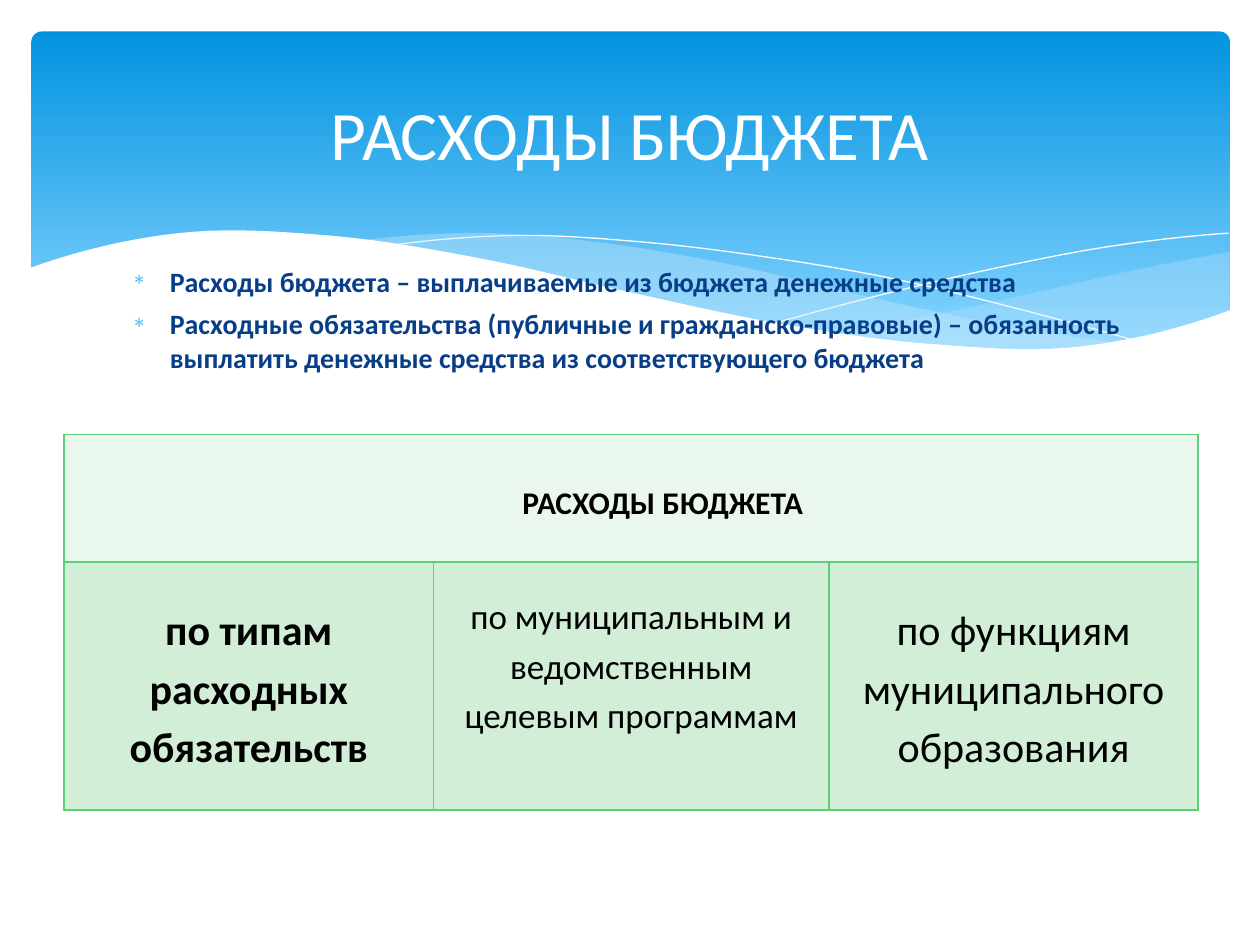
"""Build a slide on budget expenditure with a wave banner, two bullets and a table."""
from lxml import etree
from pptx import Presentation
from pptx.dml.color import RGBColor
from pptx.enum.shapes import MSO_SHAPE
from pptx.enum.text import MSO_ANCHOR, PP_ALIGN
from pptx.oxml import parse_xml
from pptx.oxml.ns import nsdecls, qn
from pptx.util import Inches, Pt

ROUNDED = MSO_SHAPE.ROUNDED_RECTANGLE
MIDDLE = MSO_ANCHOR.MIDDLE
LEFT, CENTER = PP_ALIGN.LEFT, PP_ALIGN.CENTER
SAMPLES_PER_STEP = 10
color = RGBColor.from_string


def smooth_curve(left, right, heights):
    """Return Catmull-Rom points through heights set at equal steps from left to right."""
    before = 3 * heights[0] - 3 * heights[1] + heights[2]
    after = 3 * heights[-1] - 3 * heights[-2] + heights[-3]
    knots = [before, *heights, after]
    step = (right - left) / (len(heights) - 1)
    points = []
    for index in range(len(heights) - 1):
        a, b, c, d = knots[index:index + 4]
        for sample in range(SAMPLES_PER_STEP):
            t = sample / SAMPLES_PER_STEP
            y = b + t / 2 * (c - a + t * (2 * a - 5 * b + 4 * c - d + t * (3 * b - a - 3 * c + d)))
            points.append((Inches(left + (index + t) * step), Inches(y)))
    return points + [(Inches(right), Inches(heights[-1]))]


def format_paragraph(paragraph, size, value, bold, alignment):
    """Set the alignment of a paragraph and the font of its runs."""
    paragraph.alignment = alignment
    for run in paragraph.runs:
        run.font.name = "Calibri"
        run.font.size = Pt(size)
        run.font.bold = bold
        run.font.color.rgb = color(value)


presentation = Presentation()
presentation.slide_width = Inches(10)
presentation.slide_height = Inches(7.5)
slide = presentation.slides.add_slide(presentation.slide_layouts[6])

banner = slide.shapes.add_shape(ROUNDED, Inches(0.25), Inches(0.25), Inches(9.51), Inches(2.7))
banner.adjustments[0] = 0.03
banner.shadow.inherit = False
banner.line.fill.background()
banner.fill.gradient()
banner.fill.gradient_angle = 270
for stop, position, value in zip(banner.fill.gradient_stops, (0, 0.9), ("0293E0", "83D3FE")):
    stop.position = position
    stop.color.rgb = color(value)

right_top = (2.65, 2.5, 2.33, 2.15, 2)
right_bottom = (2.65, 2.75, 2.78, 2.7, 2.47)
middle_top = (1.91, 1.85, 1.94, 2.12, 2.36, 2.57, 2.73)
middle_bottom = (1.91, 2.08, 2.31, 2.53, 2.7, 2.78, 2.73)
white_top = (2.13, 1.85, 1.87, 2.05, 2.32, 2.57, 2.73, 2.75, 2.46)
white_bottom = (3.29, 3.29, 3.29)
filled_waves = [
    (6.61, 9.76, right_top, right_bottom, "C6E7FC", 29),
    (2.86, 8.93, middle_top, middle_bottom, "C6E7FC", 40),
    (0.23, 9.77, white_top, white_bottom, "FFFFFF", 100),
]
line_waves = [
    (3.09, 9.07, (1.95, 1.87, 1.92, 2.04, 2.21, 2.45, 2.72)),
    (6.13, 9.75, (2.57, 2.33, 2.12, 1.95, 1.85)),
]

for left, right, heights in line_waves:
    points = smooth_curve(left, right, heights)
    builder = slide.shapes.build_freeform(*points[0])
    builder.add_line_segments(points[1:], close=False)
    wave_line = builder.convert_to_shape()
    wave_line.shadow.inherit = False
    wave_line.fill.background()
    wave_line.line.color.rgb = color("FFFFFF")
    wave_line.line.width = Pt(0)

for left, right, top, bottom, fill, opacity in filled_waves:
    points = smooth_curve(left, right, top) + smooth_curve(left, right, bottom)[::-1]
    builder = slide.shapes.build_freeform(*points[0])
    builder.add_line_segments(points[1:])
    wave = builder.convert_to_shape()
    wave.shadow.inherit = False
    wave.line.fill.background()
    wave.fill.solid()
    wave.fill.fore_color.rgb = color(fill)
    tint = wave._element.spPr.find(qn("a:solidFill")).find(qn("a:srgbClr"))
    etree.SubElement(tint, qn("a:alpha")).set("val", str(opacity * 1000))

bullets = [
    ("Расходы бюджета – выплачиваемые из бюджета денежные средства", 0),
    ("Расходные обязательства (публичные и гражданско-правовые) – обязанность "
     "выплатить денежные средства из соответствующего бюджета", 5),
]
body = slide.shapes.add_textbox(Inches(0.95), Inches(2.05), Inches(8.1), Inches(1.15))
body.text_frame.word_wrap = True
body.text_frame.text = "\n".join(text for text, space in bullets)
for paragraph, (text, space) in zip(body.text_frame.paragraphs, bullets):
    format_paragraph(paragraph, 16, "073E87", True, LEFT)
    paragraph.space_before = Pt(space)
    properties = paragraph._p.get_or_add_pPr()
    properties.set("marL", str(Inches(0.3)))
    properties.set("indent", str(Inches(-0.3)))
    for bullet_part in (
        f'<a:buClr {nsdecls("a")}><a:srgbClr val="31B6FD"/></a:buClr>',
        f'<a:buSzPct {nsdecls("a")} val="70000"/>',
        f'<a:buChar {nsdecls("a")} char="∗"/>',
    ):
        properties.append(parse_xml(bullet_part))

title = slide.shapes.add_textbox(Inches(0.5), Inches(0.37), Inches(9), Inches(1.37))
title.text_frame.word_wrap = True
title.text_frame.vertical_anchor = MIDDLE
title.text_frame.text = "РАСХОДЫ БЮДЖЕТА"
format_paragraph(title.text_frame.paragraphs[0], 39.6, "FFFFFF", False, CENTER)

column_widths = (2.93, 3.14, 2.93)
row_heights = (1.01, 1.97)
table = slide.shapes.add_table(
    2, 3, Inches(0.51), Inches(3.45), Inches(sum(column_widths)), Inches(sum(row_heights))
).table
for column, width in zip(table.columns, column_widths):
    column.width = Inches(width)
for row, height in zip(table.rows, row_heights):
    row.height = Inches(height)
heading = table.cell(0, 0)
programs = table.cell(1, 1)
heading.merge(table.cell(0, 2))

cells = [
    (heading, "РАСХОДЫ БЮДЖЕТА", 18, True),
    (table.cell(1, 0), "по типам расходных обязательств", 24, True),
    (programs, "по муниципальным и ведомственным целевым программам", 20, False),
    (table.cell(1, 2), "по функциям муниципального образования", 24, False),
]
for cell, text, size, bold in cells:
    cell.text_frame.text = text
    cell.vertical_anchor = MIDDLE
    cell.margin_left = cell.margin_right = Inches(0.07)
    cell.margin_top = cell.margin_bottom = 0
    paragraph = cell.text_frame.paragraphs[0]
    paragraph.line_spacing = 1.15
    format_paragraph(paragraph, size, "000000", bold, CENTER)
heading.margin_left = Inches(0.57)
heading.margin_top = Inches(0.04)
programs.margin_bottom = Inches(0.35)

for row, fill in zip(table.rows, ("EAF7EC", "D2EED6")):
    for cell in row.cells:
        cell.fill.solid()
        cell.fill.fore_color.rgb = color(fill)
        properties = cell._tc.get_or_add_tcPr()
        for position, side in enumerate(("lnL", "lnR", "lnT", "lnB")):
            properties.insert(position, parse_xml(
                f'<a:{side} {nsdecls("a")} w="{Pt(1)}"><a:solidFill>'
                f'<a:srgbClr val="5BD078"/></a:solidFill></a:{side}>'))

presentation.save("out.pptx")
